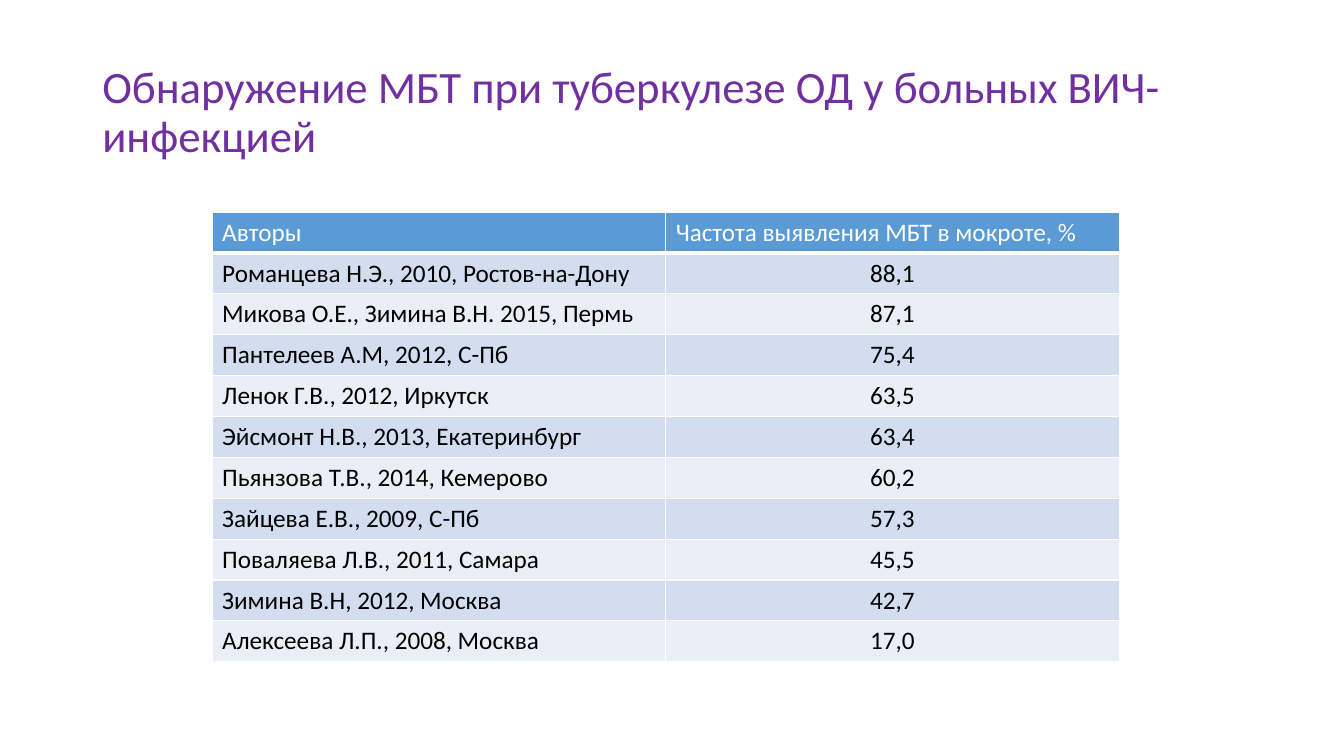
from lxml import etree
from pptx import Presentation
from pptx.dml.color import RGBColor
from pptx.enum.text import MSO_ANCHOR, PP_ALIGN
from pptx.oxml.ns import qn
from pptx.util import Pt

MIDDLE, TOP = MSO_ANCHOR.MIDDLE, MSO_ANCHOR.TOP
LEFT, CENTER = PP_ALIGN.LEFT, PP_ALIGN.CENTER
FONT = "Calibri"
COLORS = {
    "title": "7030A0",
    "head": "5B9BD5",
    "odd": "D2DEEF",
    "even": "EAEFF7",
    "text": "000000",
    "white": "FFFFFF",
}
TITLE = "Обнаружение МБТ при туберкулезе ОД у больных ВИЧ-инфекцией"
ROWS = [
    ("Авторы", "Частота выявления МБТ в мокроте, %"),
    ("Романцева Н.Э., 2010, Ростов-на-Дону", "88,1"),
    ("Микова О.Е., Зимина В.Н. 2015, Пермь", "87,1"),
    ("Пантелеев А.М, 2012, С-Пб", "75,4"),
    ("Ленок Г.В., 2012, Иркутск", "63,5"),
    ("Эйсмонт Н.В., 2013, Екатеринбург", "63,4"),
    ("Пьянзова Т.В., 2014, Кемерово", "60,2"),
    ("Зайцева Е.В., 2009, С-Пб", "57,3"),
    ("Поваляева Л.В., 2011, Самара", "45,5"),
    ("Зимина В.Н, 2012, Москва", "42,7"),
    ("Алексеева Л.П., 2008, Москва", "17,0"),
]


def color(name):
    return RGBColor.from_string(COLORS[name])


def style(para, size, name):
    for run in para.runs:
        font = run.font
        font.name, font.size, font.bold = FONT, Pt(size), False
        font.color.rgb = color(name)


def border(cell, base):
    props = cell._tc.get_or_add_tcPr()
    for side, width in (("L", 1), ("R", 1), ("T", 1), ("B", base)):
        line = etree.SubElement(props, qn("a:ln" + side), w=str(Pt(width)))
        fill = etree.SubElement(line, qn("a:solidFill"))
        etree.SubElement(fill, qn("a:srgbClr"), val=COLORS["white"])


def add_title(slide, left, top, width, height):
    box = slide.shapes.add_textbox(Pt(left), Pt(top), Pt(width), Pt(height))
    frame = box.text_frame
    frame.word_wrap = True
    frame.vertical_anchor = MIDDLE
    frame.text = TITLE
    para = frame.paragraphs[0]
    para.line_spacing = 0.9
    style(para, 32, "title")


def add_rates(slide, left, top, width, height):
    shape = slide.shapes.add_table(
        len(ROWS), 2, Pt(left), Pt(top), Pt(width), Pt(height)
    )
    table = shape.table
    for i, row in enumerate(ROWS):
        table.rows[i].height = Pt(height / len(ROWS))
        band = "head" if i == 0 else "odd" if i % 2 else "even"
        for j, text in enumerate(row):
            cell = table.cell(i, j)
            value = i > 0 and j == 1
            border(cell, 1 if i else 3)
            cell.fill.solid()
            cell.fill.fore_color.rgb = color(band)
            cell.vertical_anchor = MIDDLE if value else TOP
            cell.text_frame.text = text
            para = cell.text_frame.paragraphs[0]
            para.alignment = CENTER if value else LEFT
            style(para, 18, "text" if i else "white")


def main():
    deck = Presentation()
    deck.slide_width, deck.slide_height = Pt(960), Pt(540)
    slide = deck.slides.add_slide(deck.slide_layouts[6])
    add_title(slide, 66, 28.75, 828, 104.4)
    add_rates(slide, 151.5, 151.5, 648, 321.2)
    deck.save("out.pptx")


if __name__ == "__main__":
    main()
